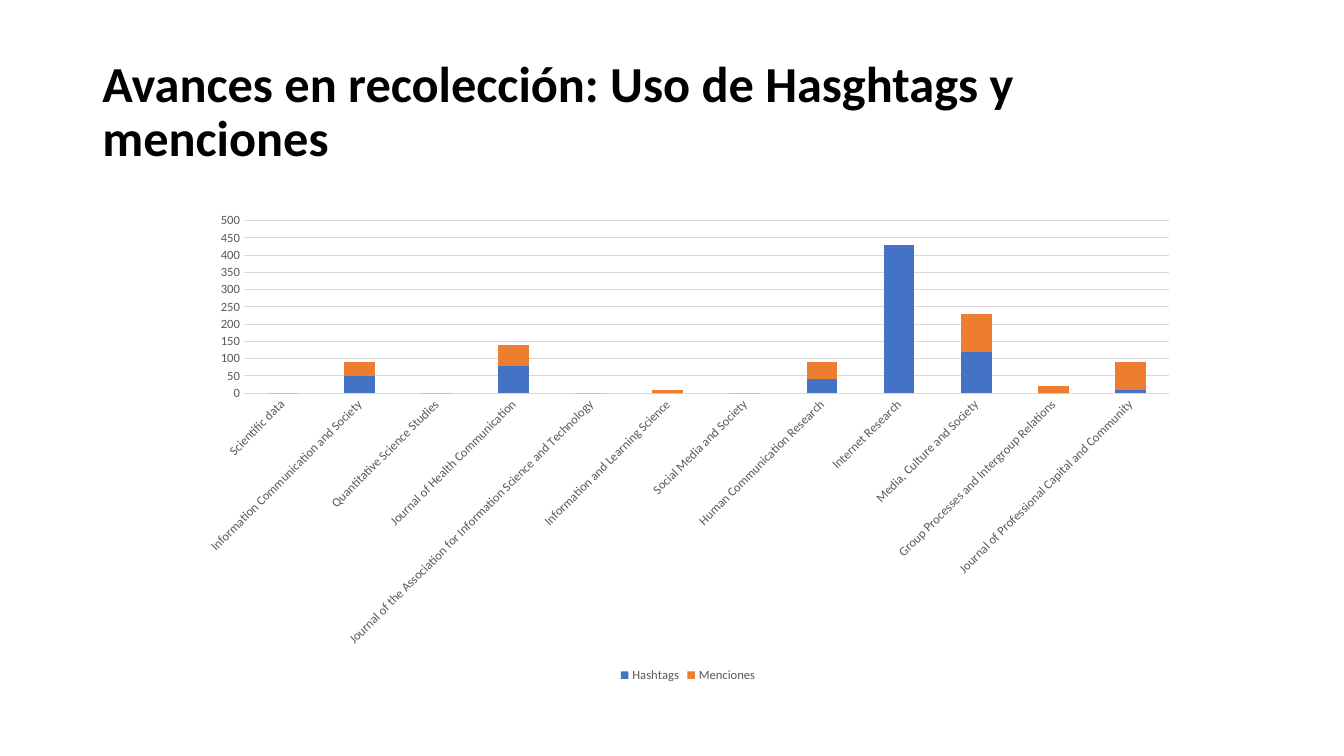
from pptx import Presentation
from pptx.chart import data
from pptx.dml.color import RGBColor
from pptx.enum import chart as ch, text
from pptx.oxml import ns
from pptx.util import Cm, Pt

# Content
TITLE = "Avances en recolección: Uso de Hasghtags y menciones"
SERIES = (("Hashtags", "4472C4"), ("Menciones", "ED7D31"))
JOURNALS = [  # journal, hashtags, mentions
    ("Scientific data", 0, 0),
    ("Information Communication and Society", 50, 40),
    ("Quantitative Science Studies", 0, 0),
    ("Journal of Health Communication", 80, 60),
    ("Journal of the Association for Information Science and Technology", 0, 0),
    ("Information and Learning Science", 0, 10),
    ("Social Media and Society", 0, 0),
    ("Human Communication Research", 40, 50),
    ("Internet Research", 430, 0),
    ("Media, Culture and Society", 120, 110),
    ("Group Processes and Intergroup Relations", 0, 20),
    ("Journal of Professional Capital and Community", 10, 80),
]
FONT = "Calibri"
BLACK, GREY, RULE = "000000", "595959", "D9D9D9"


def color(value):
    return RGBColor.from_string(value)


def set_font(font, size, value):
    font.name, font.size = FONT, Pt(size)
    font.color.rgb = color(value)


def set_line(line, value):
    line.color.rgb = color(value)
    line.width = Pt(0.75)


def add_title(slide):
    box = slide.shapes.add_textbox(Cm(2.33), Cm(1.01), Cm(29.21), Cm(3.68))
    frame = box.text_frame
    frame.word_wrap = True
    frame.vertical_anchor = text.MSO_ANCHOR.MIDDLE
    paragraph = frame.paragraphs[0]
    paragraph.line_spacing = 0.9
    run = paragraph.add_run()
    run.text = TITLE
    run.font.bold = True
    set_font(run.font, 36, BLACK)


def add_journal_chart(slide):
    names, *columns = zip(*JOURNALS)
    chart_data = data.CategoryChartData()
    chart_data.categories = names
    for (name, _), values in zip(SERIES, columns):
        chart_data.add_series(name, values)
    chart = slide.shapes.add_chart(
        ch.XL_CHART_TYPE.COLUMN_STACKED,
        Cm(4.72), Cm(5.13), Cm(25.24), Cm(12.17), chart_data).chart
    chart.has_title = False
    set_font(chart.font, 10, BLACK)

    # Columns
    plot = chart.plots[0]
    plot.gap_width, plot.overlap = 150, 100
    plot.vary_by_categories = False
    for series, (_, fill) in zip(plot.series, SERIES):
        series.format.fill.solid()
        series.format.fill.fore_color.rgb = color(fill)

    # Axes
    category_axis, value_axis = chart.category_axis, chart.value_axis
    for axis in (category_axis, value_axis):
        axis.major_tick_mark = axis.minor_tick_mark = ch.XL_TICK_MARK.NONE
        set_font(axis.tick_labels.font, 9, GREY)
    set_line(category_axis.format.line, RULE)
    value_axis.format.line.fill.background()
    value_axis.minimum_scale, value_axis.maximum_scale = 0, 500
    value_axis.major_unit = 50
    value_axis.has_major_gridlines = True
    set_line(value_axis.major_gridlines.format.line, RULE)

    # Slanted journal names
    labels = next(chart.element.iter(ns.qn("c:catAx"))).find(ns.qn("c:txPr"))
    labels.find(ns.qn("a:bodyPr")).set("rot", str(-45 * 60000))

    # Legend
    chart.has_legend = True
    chart.legend.position = ch.XL_LEGEND_POSITION.BOTTOM
    chart.legend.include_in_layout = False
    set_font(chart.legend.font, 9, GREY)


def main():
    presentation = Presentation()
    presentation.slide_width, presentation.slide_height = Cm(33.87), Cm(19.05)
    slide = presentation.slides.add_slide(presentation.slide_layouts[6])
    add_title(slide)
    add_journal_chart(slide)
    presentation.save("out.pptx")


if __name__ == "__main__":
    main()
